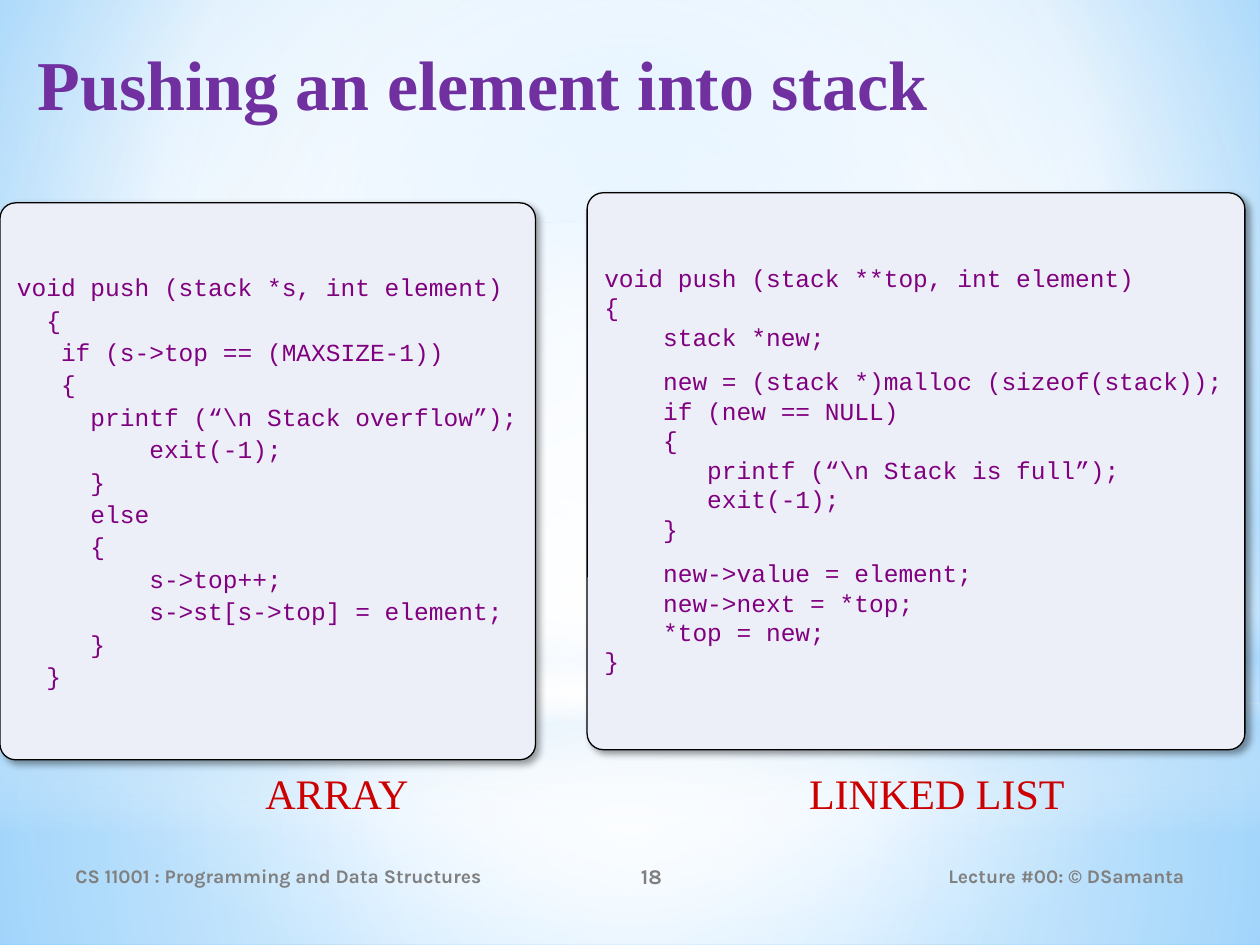
from lxml import etree
from pptx import Presentation
from pptx import util as u
from pptx.dml.color import RGBColor
from pptx.enum import shapes, text
from pptx.oxml import parse_xml

NS = "http://schemas.openxmlformats.org/drawingml/2006/main"
COLORS = {
    "title": "7030A0", "footer": "808080", "code": "800080",
    "caption": "CC0000", "panel": "ECEFF8", "outline": "000000",
    "white": "FFFFFF", "pale": "B4DCFA", "sky": "9ED5FF", "blue": "5BB9FF",
}
FORMATS = {
    "title": {"name": "Times New Roman", "size": u.Pt(40), "bold": True},
    "footer": {"name": "Karla", "size": u.Pt(11), "bold": True},
    "code": {"name": "Courier New", "size": u.Pt(14), "bold": False},
    "caption": {"name": "Times New Roman", "size": u.Pt(24), "bold": False},
}
ALIGN = text.PP_ALIGN
ANCHOR = text.MSO_ANCHOR
CENTERED = (50, 50, 50, 50)
LINE_GAP, BLANK_GAP = 1.7, 10.3

ARRAY_CODE = r"""void push (stack *s, int element)
  {
   if (s->top == (MAXSIZE-1))
   {
     printf (“\n Stack overflow”);
         exit(-1);
     }
     else
     {
         s->top++;
         s->st[s->top] = element;
     }
  }"""
LIST_CODE = r"""void push (stack **top, int element)
{
    stack *new;

    new = (stack *)malloc (sizeof(stack));
    if (new == NULL)
    {
       printf (“\n Stack is full”);
       exit(-1);
    }

    new->value = element;
    new->next = *top;
    *top = new;
}"""


def rgb(color):
    return RGBColor.from_string(COLORS[color])


def replace_fill(parent, stops, focus=None):
    """Swap a solid fill for stops of (position, colour, opacity).

    With a focus rectangle the gradient is circular, otherwise it runs down.
    """
    marks = "".join(
        f'<a:gs pos="{pos * 1000}"><a:srgbClr val="{COLORS[color]}">'
        f'<a:alpha val="{opacity * 1000}"/></a:srgbClr></a:gs>'
        for pos, color, opacity in stops)
    if focus:
        sides = " ".join(f'{side}="{value * 1000}"' for side, value in zip("ltrb", focus))
        direction = f'<a:path path="circle"><a:fillToRect {sides}/></a:path>'
    else:
        direction = '<a:lin ang="5400000" scaled="0"/>'
    solid = parent.find(f"{{{NS}}}solidFill")
    parent.replace(solid, parse_xml(
        f'<a:gradFill xmlns:a="{NS}" rotWithShape="1"><a:gsLst>{marks}</a:gsLst>'
        f'{direction}</a:gradFill>'))


class SlideBuilder:
    def __init__(self, page):
        self.page = page

    def background(self, stops, focus):
        fill = self.page.background.fill
        fill.solid()
        fill.fore_color.rgb = rgb("white")
        properties = self.page.element.find(".//{*}bgPr")
        replace_fill(properties, stops, focus)

    def shape(self, kind, place, color="white"):
        box = self.page.shapes.add_shape(kind, *map(u.Inches, place))
        box.shadow.inherit = False
        box.fill.solid()
        box.fill.fore_color.rgb = rgb(color)
        box.line.fill.background()
        return box

    def glow(self, kind, place, stops, focus=None):
        replace_fill(self.shape(kind, place).element.spPr, stops, focus)

    def add_span(self, para, words, style, **changes):
        span = para.add_run()
        span.text = words
        for name, value in {**FORMATS[style], **changes}.items():
            setattr(span.font, name, value)
        span.font.color.rgb = rgb(style)

    def label(self, place, words, style, align=ALIGN.LEFT, anchor=ANCHOR.MIDDLE, **changes):
        box = self.page.shapes.add_textbox(*map(u.Inches, place))
        frame = box.text_frame
        frame.word_wrap = True
        frame.vertical_anchor = anchor
        para = frame.paragraphs[0]
        para.alignment = align
        self.add_span(para, words, style, **changes)
        return box

    def code_panel(self, place, code, line_spacing):
        """Draw a shadowed panel; a blank line in the code widens the next gap."""
        box = self.shape(shapes.MSO_SHAPE.ROUNDED_RECTANGLE, place, "panel")
        box.adjustments[0] = 0.029
        box.line.color.rgb = rgb("outline")
        box.line.width = u.Pt(0.75)
        effects = box.element.spPr.find(f"{{{NS}}}effectLst")
        shadow = etree.SubElement(
            effects, f"{{{NS}}}outerShdw", blurRad=str(u.Pt(4)), dist=str(u.Pt(3)),
            dir="2700000", algn="tl", rotWithShape="0")
        color = etree.SubElement(shadow, f"{{{NS}}}srgbClr", val=COLORS["outline"])
        etree.SubElement(color, f"{{{NS}}}alpha", val="40000")

        frame = box.text_frame
        frame.word_wrap = True
        frame.vertical_anchor = ANCHOR.MIDDLE
        para, gap = frame.paragraphs[0], 0
        for line in code.splitlines():
            if not line:
                gap = BLANK_GAP
                continue
            if para.runs:
                para = frame.add_paragraph()
            para.alignment = ALIGN.LEFT
            para.line_spacing = line_spacing
            para.space_before = u.Pt(gap)
            self.add_span(para, line, "code")
            gap = LINE_GAP


def main():
    deck = Presentation()
    deck.slide_width, deck.slide_height = u.Inches(10), u.Inches(7.5)
    slide = SlideBuilder(deck.slides.add_slide(deck.slide_layouts[6]))

    slide.background([(0, "sky", 100), (60, "white", 100), (100, "blue", 100)],
                     (20, 10, 20, 60))
    rectangle, oval = shapes.MSO_SHAPE.RECTANGLE, shapes.MSO_SHAPE.OVAL
    slide.glow(rectangle, (0, 5.58, 10, 1.92),
               [(0, "white", 91), (37, "white", 76), (100, "pale", 79)], CENTERED)
    slide.glow(rectangle, (0, 0, 10, 5.58),
               [(0, "white", 89), (48, "white", 62), (100, "pale", 79)], CENTERED)
    slide.glow(rectangle, (0, 4.12, 10, 2.5),
               [(0, "white", 0), (29, "white", 30), (45, "pale", 40),
                (55, "white", 26), (65, "pale", 60), (100, "white", 0)])
    slide.glow(oval, (0, 1.75, 10, 5.58),
               [(0, "white", 100), (56, "white", 0)], CENTERED)

    title = slide.label((0.2, 0.21, 9.53, 1.25), "Pushing an element into stack",
                        "title", anchor=ANCHOR.TOP)
    title.text_frame.margin_top = u.Inches(0.11)

    footers = [
        (0.5, 3.67, "CS 11001 : Programming and Data Structures", ALIGN.LEFT, 11),
        (4.17, 2, "18", ALIGN.CENTER, 12),
        (6.75, 2.75, "Lecture #00: © DSamanta", ALIGN.RIGHT, 11),
    ]
    for left, width, words, align, size in footers:
        slide.label((left, 6.75, width, 0.4), words, "footer", align, size=u.Pt(size))

    slide.code_panel((0, 1.61, 4.25, 4.42), ARRAY_CODE, 1.0)
    slide.code_panel((4.66, 1.53, 5.22, 4.42), LIST_CODE, 0.9)
    for left, width, words in [(1.76, 1.83, "ARRAY"), (6.17, 2.53, "LINKED LIST")]:
        slide.label((left, 6.04, width, 0.5), words, "caption", ALIGN.CENTER)

    deck.save("out.pptx")


if __name__ == "__main__":
    main()
